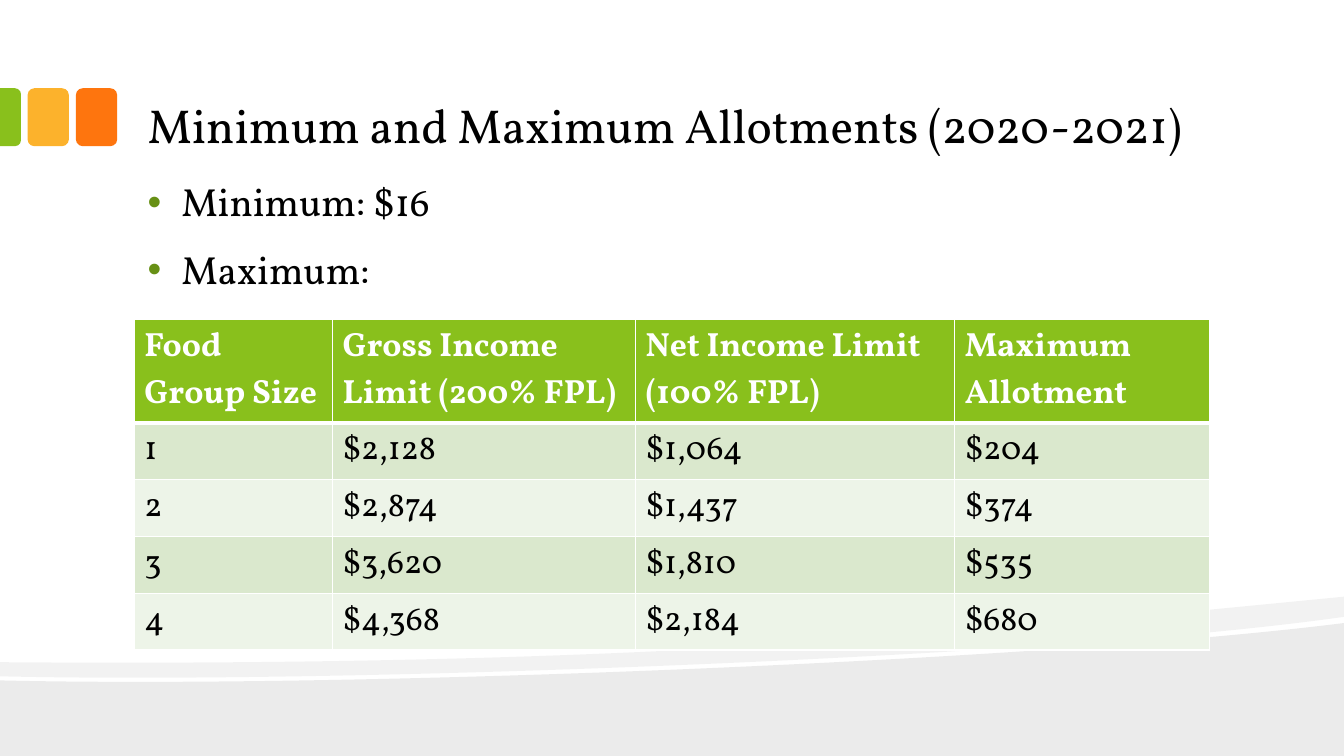
from lxml import etree
from pptx import Presentation
from pptx.dml.color import RGBColor
from pptx.enum.shapes import MSO_SHAPE
from pptx.enum.text import MSO_ANCHOR
from pptx.oxml.ns import qn
from pptx.util import Pt

ROUND = MSO_SHAPE.ROUNDED_RECTANGLE
ROUND_TOP = MSO_SHAPE.ROUND_2_SAME_RECTANGLE
TOP, BOTTOM = MSO_ANCHOR.TOP, MSO_ANCHOR.BOTTOM

# Content
FONT = "Vollkorn"
BLACK, WHITE, GREEN = "000000", "FFFFFF", "89C01C"
BULLET_GREEN = "679015"
BANDS = ["DAE8CD", "EDF4E8"]

TITLE = "Minimum and Maximum Allotments (2020-2021)"
BULLETS = ["Minimum: $16", "Maximum:"]
ALLOTMENTS = [
    ["Food Group Size", "Gross Income Limit (200% FPL)",
     "Net Income Limit (100% FPL)", "Maximum\nAllotment"],
    ["1", "$2,128", "$1,064", "$204"],
    ["2", "$2,874", "$1,437", "$374"],
    ["3", "$3,620", "$1,810", "$535"],
    ["4", "$4,368", "$2,184", "$680"],
]
COLUMN_WIDTHS = [141.5, 216.5, 228, 182]
HEADER_HEIGHT, ROW_HEIGHT = 73.4, 40.6

# Wave outlines: each step is one corner, or the three points of a Bézier curve
GROUND = [[(960, 445)], [(960, 540)], [(0, 540)], [(0, 486)],
          [(253.5, 492), (750, 471.5), (960, 445)]]
RIBBON = [[(960, 426.2)], [(960, 440.6)],
          [(903.6, 448.6), (827.3, 455.8), (740.9, 461.5)],
          [(502.6, 477.4), (185.8, 487.4), (0, 483.1)], [(0, 473)],
          [(469.4, 476.6), (699, 451.4), (960, 426.2)]]
WAVES = [(GROUND, 8), (RIBBON, 5)]  # outline, opacity in percent

# Tiles beside the title
TILE_TOP, TILE_W, TILE_H = 63, 29.5, 41.4
TILES = [(54.2, "FE750E"), (19.7, "FCB22C")]
TAB_W = 15

prs = Presentation()
prs.slide_width, prs.slide_height = Pt(960), Pt(540)
slide = prs.slides.add_slide(prs.slide_layouts[6])
shapes = slide.shapes


def rgb(color):
    return RGBColor.from_string(color)


def paint(shape, color):
    shape.shadow.inherit = False
    shape.fill.solid()
    shape.fill.fore_color.rgb = rgb(color)
    shape.line.fill.background()


def style(paragraph, size, color, bold=False):
    for run in paragraph.runs:
        run.font.name, run.font.size, run.font.bold = FONT, Pt(size), bold
        run.font.color.rgb = rgb(color)


def add_wave(outline, opacity):
    points = [(Pt(x), Pt(y)) for step in outline for x, y in step]
    builder = shapes.build_freeform(*points[0])
    builder.add_line_segments(points[1:], close=True)
    wave = builder.convert_to_shape()
    paint(wave, BLACK)
    props = wave._element.spPr
    tint = props.find(qn("a:solidFill"))[0]
    etree.SubElement(tint, qn("a:alpha"), val=str(opacity * 1000))
    # Join the three segments of each curved step into one Bézier curve
    segments = iter(list(props.iter(qn("a:lnTo"))))
    for step in outline[1:]:
        parts = [next(segments) for _ in step]
        if len(parts) == 3:
            bend = etree.Element(qn("a:cubicBezTo"))
            parts[0].addprevious(bend)
            for part in parts:
                bend.append(part[0])
                part.getparent().remove(part)


def add_text(left, top, width, height, text, size, anchor):
    frame = shapes.add_textbox(Pt(left), Pt(top), Pt(width), Pt(height)).text_frame
    frame.word_wrap = True
    frame.vertical_anchor = anchor
    frame.margin_left = frame.margin_right = Pt(9.5)
    frame.margin_top = frame.margin_bottom = Pt(5)
    frame.text = text
    for paragraph in frame.paragraphs:
        style(paragraph, size, BLACK)
    return frame


def add_bullet(paragraph):
    paragraph.line_spacing = 0.9
    paragraph.space_before = Pt(18)
    props = paragraph._p.get_or_add_pPr()
    props.set("marL", str(Pt(24)))
    props.set("indent", str(Pt(-24)))
    color = etree.SubElement(props, qn("a:buClr"))
    etree.SubElement(color, qn("a:srgbClr"), val=BULLET_GREEN)
    etree.SubElement(props, qn("a:buFont"), typeface="Arial")
    etree.SubElement(props, qn("a:buChar"), char="•")


def add_borders(cell, widths):
    props = cell._tc.get_or_add_tcPr()
    for i, (side, width) in enumerate(widths.items()):
        line = etree.Element(qn("a:" + side), w=str(Pt(width)))
        fill = etree.SubElement(line, qn("a:solidFill"))
        etree.SubElement(fill, qn("a:srgbClr"), val=WHITE)
        props.insert(i, line)


# Background waves
for outline, opacity in WAVES:
    add_wave(outline, opacity)

# Coloured tiles; the tab is turned so its round end faces right
for left, color in TILES:
    paint(shapes.add_shape(ROUND, Pt(left), Pt(TILE_TOP), Pt(TILE_W), Pt(TILE_H)), color)
tab = shapes.add_shape(ROUND_TOP, Pt((TAB_W - TILE_H) / 2),
                       Pt(TILE_TOP + (TILE_H - TAB_W) / 2), Pt(TILE_H), Pt(TAB_W))
tab.rotation = 90
tab.adjustments[0] = 0.29
paint(tab, GREEN)

# Title and bullets
add_text(96, 12.2, 768, 102.2, TITLE, 34, BOTTOM)
bullets = add_text(96, 125.6, 768, 360, "\n".join(BULLETS), 28, TOP)
for paragraph in bullets.paragraphs:
    add_bullet(paragraph)

# Allotment table
heights = [HEADER_HEIGHT] + [ROW_HEIGHT] * (len(ALLOTMENTS) - 1)
table = shapes.add_table(len(ALLOTMENTS), len(COLUMN_WIDTHS), Pt(96), Pt(228.5),
                         Pt(sum(COLUMN_WIDTHS)), Pt(sum(heights))).table
for column, width in zip(table.columns, COLUMN_WIDTHS):
    column.width = Pt(width)
for r, values in enumerate(ALLOTMENTS):
    table.rows[r].height = Pt(heights[r])
    header = r == 0
    for c, value in enumerate(values):
        cell = table.cell(r, c)
        cell.text = value
        for paragraph in cell.text_frame.paragraphs:
            style(paragraph, 24, WHITE if header else BLACK, header)
        cell.fill.solid()
        cell.fill.fore_color.rgb = rgb(GREEN if header else BANDS[(r - 1) % 2])
        add_borders(cell, {"lnL": 1, "lnR": 1, "lnT": 3 if r == 1 else 1,
                           "lnB": 3 if header else 1})

prs.save("out.pptx")
